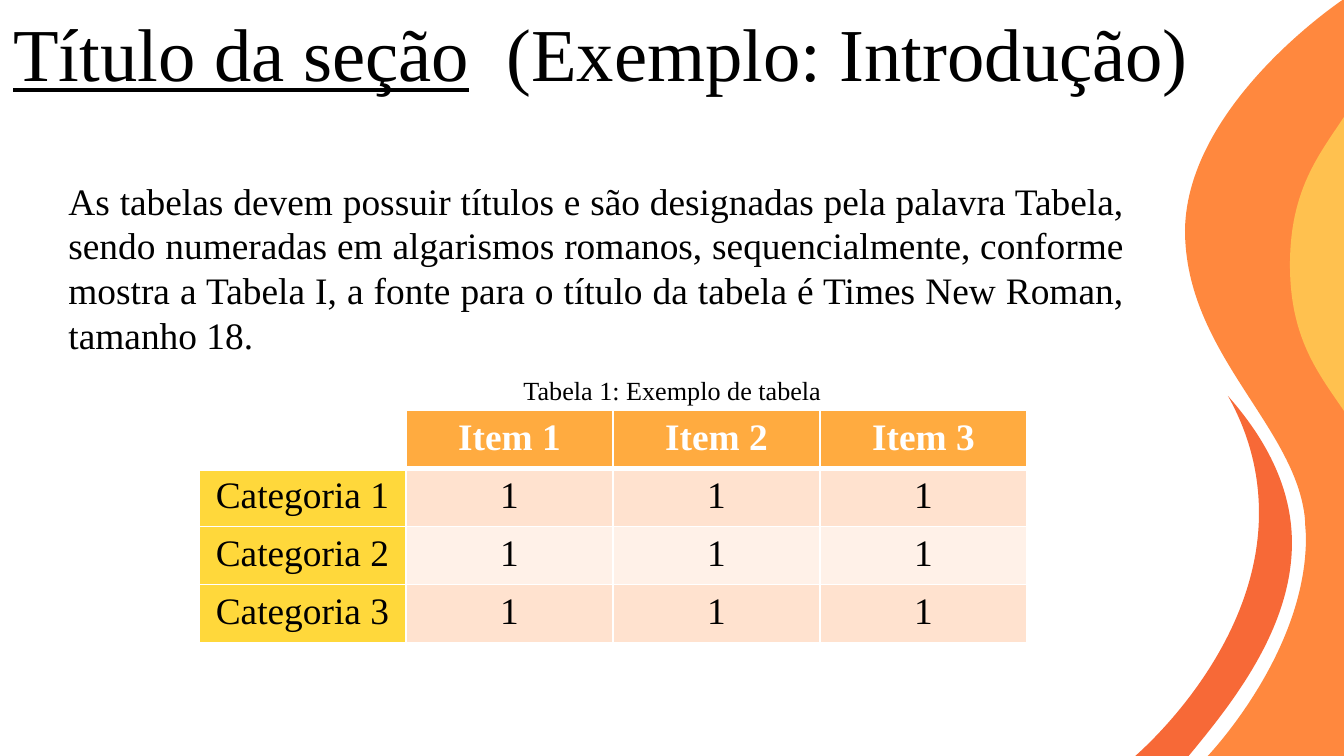
from itertools import chain

from lxml import etree
from pptx import Presentation
from pptx import util as u
from pptx.dml.color import RGBColor
from pptx.enum import text
from pptx.oxml.ns import qn

PX = 9144000 / 1344  # EMU in one px
WIDTH, HEIGHT = 1344, 756
FONT = "Times New Roman"
COLORS = {
    "ink": "000000", "white": "FFFFFF",
    "wave": "FF883E", "ribbon": "F76937", "sun": "FFC14F",
    "header": "FFAB40", "category": "FFD83B",
    "band_dark": "FFE2CF", "band_light": "FFF1E8",
}


def px(length):
    return u.Emu(round(length * PX))


def rgb(name):
    return RGBColor.from_string(COLORS[name])


def place(shape, box):
    shape.left, shape.top, shape.width, shape.height = map(px, box)


def write(paragraph, words, size, color="ink", **style):
    run = paragraph.add_run()
    run.text = words
    run.font.name, run.font.size = FONT, u.Pt(size)
    run.font.color.rgb = rgb(color)
    for key, value in style.items():
        setattr(run.font, key, value)


def prepare(shape, align):
    """Set up a top-anchored, wrapping text frame and return its first paragraph."""
    frame = shape.text_frame
    frame.word_wrap = True
    frame.auto_size = text.MSO_AUTO_SIZE.NONE
    frame.vertical_anchor = text.MSO_ANCHOR.TOP
    paragraph = frame.paragraphs[0]
    paragraph.alignment = align
    return paragraph


def add_outline(slide, start, segments, color, origin):
    """Draw a closed outline; a segment of three points is a cubic curve, of one a line."""
    left, top = origin
    (x, y), *rest = [(px(left + dx), px(top + dy))
                     for dx, dy in chain([start], *segments)]
    builder = slide.shapes.build_freeform(x, y)
    builder.add_line_segments(rest, close=True)
    outline = builder.convert_to_shape()
    steps = iter(list(outline._element.iter(qn("a:lnTo"))))
    for segment in segments:
        first, *others = [next(steps) for _ in segment]
        if others:
            first.tag = qn("a:cubicBezTo")
        for step in others:
            first.append(step[0])
            step.getparent().remove(step)
    outline.shadow.inherit = False
    outline.fill.solid()
    outline.fill.fore_color.rgb = rgb(color)
    outline.line.fill.background()


def add_waves(slide, box):
    left, top, width, height = box
    wave = [
        ((width, -1), (54, 103), (52, 230)),
        ((52, 353), (163, 426), (172, 519)),
        ((172, 525), (173, 532), (173, 538)),
        ((173, 655), (73, height), (73, height)),
        ((width, height),),
    ]
    ribbon = [
        ((159, 497), (141, 448), (95, 396)),
        ((118, 437), (126, 477), (126, 513)),
        ((126, 646), (13, 747), (0, height)),
        ((54, height),),
        ((97, 706), (159, 630), (159, 543)),
    ]
    sun = [
        ((186, 155), (157, 190), (157, 265)),
        ((157, 339), (186, 374), (width, 411)),
    ]
    add_outline(slide, (width, -1), wave, "wave", (left, top))
    add_outline(slide, (159, 543), ribbon, "ribbon", (left, top))
    add_outline(slide, (width, 117), sun, "sun", (left, top))


def add_title(slide, box):
    title = slide.shapes.title
    place(title, box)
    heading = prepare(title, text.PP_ALIGN.LEFT)
    write(heading, "Título da seção", 40, underline=True)
    write(heading, "  (Exemplo: Introdução)", 40, underline=False)


def add_body(slide, box):
    body = slide.placeholders[1]
    place(body, box)
    rule = prepare(body, text.PP_ALIGN.JUSTIFY)
    properties = rule._p.get_or_add_pPr()
    properties.set("marL", "0")
    properties.set("indent", "0")
    etree.SubElement(properties, qn("a:buNone"))
    rule.space_before = u.Pt(0)
    write(rule, "As tabelas devem possuir títulos e são designadas pela palavra Tabela, "
                "sendo numeradas em algarismos romanos, sequencialmente, conforme mostra "
                "a Tabela I, a fonte para o título da tabela é Times New Roman, "
                "tamanho 18.", 20)


def add_borders(cell, widths):
    """Draw white borders; widths maps each side (L, R, T, B) to points."""
    properties = cell._tc.get_or_add_tcPr()
    for side, points in widths.items():
        line = etree.SubElement(properties, qn(f"a:ln{side}"), w=str(u.Pt(points)))
        fill = etree.SubElement(line, qn("a:solidFill"))
        etree.SubElement(fill, qn("a:srgbClr"), val=COLORS["white"])


def cell_fill(row, column):
    if row == 0:
        return "header" if column else "white"
    if column == 0:
        return "category"
    return "band_dark" if row % 2 else "band_light"


def add_items_table(slide, box):
    items = ["Item 1", "Item 2", "Item 3"]
    categories = ["Categoria 1", "Categoria 2", "Categoria 3"]
    rows = [["", *items]] + [[name] + ["1"] * len(items) for name in categories]
    grid = slide.shapes.add_table(len(rows), len(rows[0]), *map(px, box)).table
    for r, row in enumerate(rows):
        for c, words in enumerate(row):
            cell = grid.cell(r, c)
            add_borders(cell, {"L": 1, "R": 1, "T": 3 if r == 1 else 1,
                               "B": 3 if r == 0 else 1})
            cell.fill.solid()
            cell.fill.fore_color.rgb = rgb(cell_fill(r, c))
            if words:
                label = cell.text_frame.paragraphs[0]
                label.alignment = text.PP_ALIGN.CENTER
                write(label, words, 20, "ink" if r else "white", bold=r == 0)


def add_caption(slide, box):
    caption = slide.shapes.add_textbox(*map(px, box))
    write(prepare(caption, text.PP_ALIGN.CENTER), "Tabela 1: Exemplo de tabela", 14)


def main():
    deck = Presentation()
    deck.slide_width, deck.slide_height = px(WIDTH), px(HEIGHT)
    slide = deck.slides.add_slide(deck.slide_layouts[1])
    add_waves(slide, (1133, 0, WIDTH - 1133, HEIGHT + 2))
    add_title(slide, (0, 0, 1324, 103))
    add_body(slide, (55, 171, 1083, 226))
    add_items_table(slide, (199, 410, 828, 233))
    add_caption(slide, (471, 368, 403, 77))
    deck.save("out.pptx")


if __name__ == "__main__":
    main()
